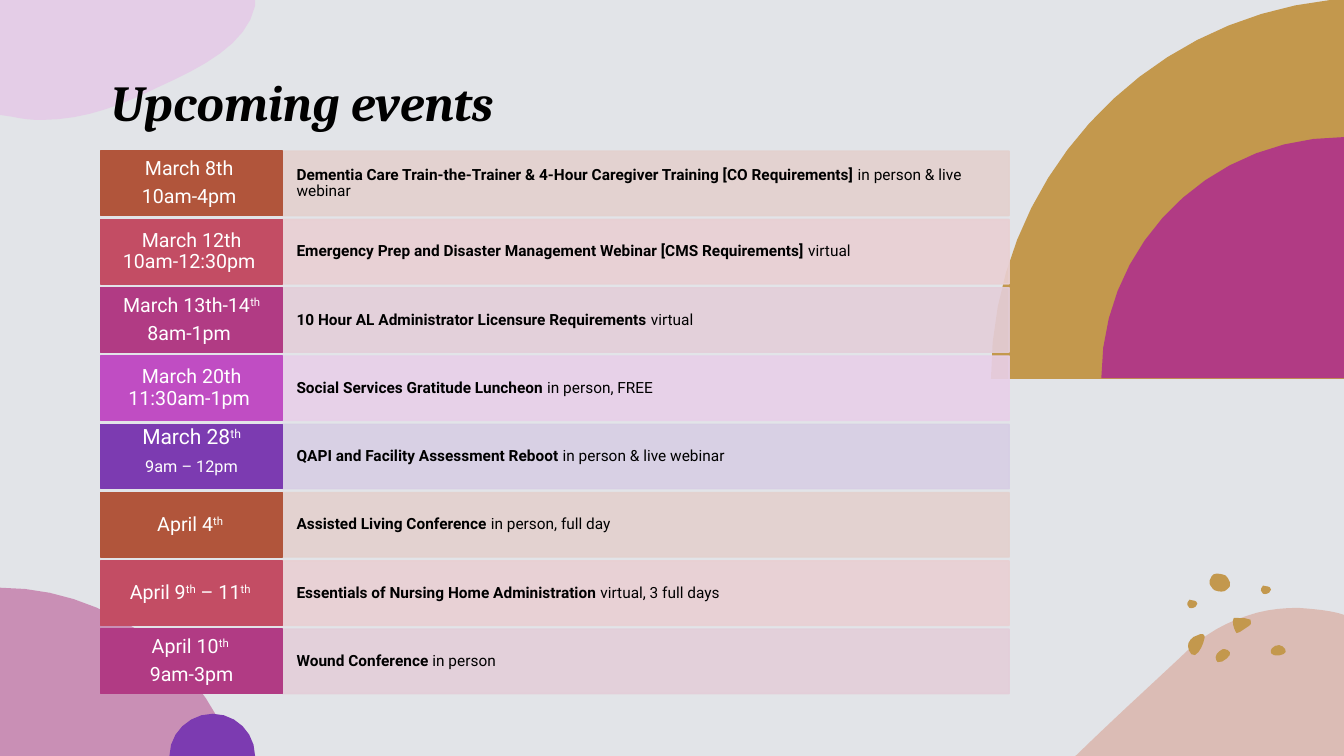
import math

import lxml.etree
import pptx
import pptx.dml.color
import pptx.enum.shapes
import pptx.enum.text
import pptx.oxml.ns
import pptx.util

Pt = pptx.util.Pt
PP_ALIGN = pptx.enum.text.PP_ALIGN
ANCHOR = pptx.enum.text.MSO_ANCHOR

COLORS = {
    "background": "E2E4E8", "black": "000000", "white": "FFFFFF",
    "gold": "C3984D", "peach": "D69684", "lilac": "E6B8E7",
    "rust": "B1553B", "rust_tint": "E4D1CE",
    "rose": "C34D64", "rose_tint": "E9D0D3",
    "magenta": "B13B84", "magenta_tint": "E4CED9",
    "orchid": "C04DC3", "orchid_tint": "E8D0E9",
    "purple": "7C3BB1", "purple_tint": "D7CEE4",
}

TITLE = "Upcoming events"

# Colour, date lines as (text, size) with superscripts between carets, event, format
EVENTS = [
    ("rust", [("March 8th ", 14), ("10am-4pm ", 14)],
     "Dementia Care Train-the-Trainer & 4-Hour Caregiver Training [CO Requirements] ",
     "in person & live webinar"),
    ("rose", [("March 12th 10am-12:30pm ", 14)],
     "Emergency Prep and Disaster Management Webinar [CMS Requirements] ", "virtual"),
    ("magenta", [("March 13th-14^th", 14), ("8am-1pm ", 14)],
     "10 Hour AL Administrator Licensure Requirements ", "virtual"),
    ("orchid", [("March 20th 11:30am-1pm ", 14)],
     "Social Services Gratitude Luncheon ", "in person, FREE"),
    ("purple", [("March 28^th", 15), ("^9am – 12pm", 20)],
     "QAPI and Facility Assessment Reboot ", "in person & live webinar"),
    ("rust", [("April 4^th ", 14)],
     "Assisted Living Conference ", "in person, full day"),
    ("rose", [("April 9^th^ – 11^th ", 14)],
     "Essentials of Nursing Home Administration ", "virtual, 3 full days"),
    ("magenta", [("April 10^th ", 14), ("9am-3pm", 14)],
     "Wound Conference", " in person"),
]

# Outlines in points: a start, then lines (x, y) and Bézier curves (two controls, end)
PEBBLE = [(900.7, 421.9), (900.7, 421.9, 900.7, 419, 902.2, 418.3), (905.8, 419),
          (906.5, 419, 907.9, 419.8, 907.9, 421.2), (906.5, 423.4), (905, 424.1),
          (904.3, 424.1, 902.9, 424.8, 902.2, 424.1)]
PEBBLE_SHIFT = (-52.6, 10.1)
HILL = [(927.4, 434.2), (936.7, 434.9, 946.1, 435.6, 955.4, 437.8), (960, 439.2),
        (960, 540), (768, 540), (769, 539.3), (793.4, 515.5, 818.6, 492.5, 841.7, 470.9),
        (857.5, 455, 872.6, 445.7, 890.6, 439.9), (902.9, 435.6, 915.1, 434.2, 927.4, 434.2)]
SPOTS = [
    [(873.4, 463.7), (874.8, 463.7, 875.5, 463.7, 877, 464.4),
     (878.4, 465.1, 879.1, 466.6, 878.4, 468), (877, 470.2, 872.6, 473.8, 869.8, 473),
     (869, 472.3, 868.3, 470.9, 868.3, 469.4), (868.3, 468, 869.8, 465.8, 871.2, 465.1)],
    [(857.5, 452.9), (859, 452.9, 860.4, 452.9, 860.4, 454.3), (860.4, 455.8),
     (859.7, 459.4, 858.2, 463, 856.1, 465.8), (854.6, 467.3, 852.5, 469.4, 851, 467.3),
     (848.9, 465.1, 848.2, 461.5, 848.9, 459.4), (849.6, 457.2, 851, 456.5, 852.5, 455)],
    [(913.7, 460.8), (915.1, 460.8, 917.3, 462.2, 918, 463.7),
     (918.7, 465.1, 918.7, 466.6, 916.6, 467.3), (914.4, 468.7, 908.6, 468.7, 907.9, 466.6),
     (907.2, 465.1, 907.9, 463.7, 908.6, 463), (910.1, 461.5, 911.5, 460.8, 913.7, 460.8)],
    [(864.7, 418.3), (864, 418.3, 863.3, 414, 865.4, 411.8),
     (866.9, 410.4, 866.9, 409.7, 869, 409.7), (871.2, 409.7, 874.1, 410.4, 875.5, 411.1),
     (877, 412.6, 879.8, 416.2, 878.4, 419), (876.2, 421.2, 875.5, 422.6, 872.6, 422.6),
     (870.5, 422.6, 866.9, 421.9, 866.2, 420.5)],
    [(884.2, 441.4), (888.5, 441.4, 896.4, 441.4, 893.5, 445.7), (892.1, 447.1),
     (885.6, 451.4), (883.4, 452.2), (882.7, 451.4),
     (881.3, 448.6, 880.6, 446.4, 880.6, 443.5), (881.3, 441.4)],
    PEBBLE,
    [tuple(v + PEBBLE_SHIFT[i % 2] for i, v in enumerate(seg)) for seg in PEBBLE],
]
CORNER = [(0, 0), (182.2, 0), (182.2, 4.3), (176.4, 31.7, 144, 48.2, 113.8, 61.9),
          (88.6, 74.2, 61.9, 85.7, 29.5, 85.7), (22.3, 85.7, 15.8, 85, 9.4, 83.5), (0, 82.1)]
ARCH = [(960, 0), (960, 270.7), (707.8, 270.7), (707.8, 130.3, 814.3, 14.4, 950.4, 0)]
INNER_ARCH = [(786.7, 270), (786.7, 175, 864, 97.9, 960, 97.9), (960, 270)]
MOUND = [(0, 419.8), (72.7, 419.8, 136.8, 465.1, 163.4, 529.2), (168, 540), (0, 540)]
DOME = [(151.9, 509.8), (168.5, 509.8, 182.2, 523.4, 182.2, 540), (121, 540),
        (121, 523.4, 135.4, 509.8, 151.9, 509.8)]

DECOR = [(HILL, "peach", 50), *[(spot, "gold", 100) for spot in SPOTS],
         (CORNER, "lilac", 50), (ARCH, "gold", 100), (INNER_ARCH, "magenta", 100),
         (MOUND, "magenta", 50), (DOME, "purple", 100)]

TITLE_BOX = (72, 31, 617.8, 63.3)
ROWS_TOP, ROW_PITCH, ROW_HEIGHT = 108, 48.77, 46.1
DATE_LEFT, DATE_WIDTH, EVENT_WIDTH = 72, 129.8, 519
SPACE_AFTER = 0.35


def rgb(name):
    return pptx.dml.color.RGBColor.from_string(COLORS[name])


def set_all(target, values):
    for name, value in values.items():
        setattr(target, name, value)


def paint(shape, color, opacity=100, outlined=False):
    shape.shadow.inherit = False
    shape.fill.solid()
    shape.fill.fore_color.rgb = rgb(color)
    if outlined:
        shape.line.color.rgb = rgb(color)
        shape.line.width = Pt(1)
    else:
        shape.line.fill.background()
    if opacity < 100:
        qn = pptx.oxml.ns.qn
        for clr in list(shape.element.spPr.iter(qn("a:srgbClr"))):
            lxml.etree.SubElement(clr, qn("a:alpha")).set("val", str(opacity * 1000))


def flatten(outline):
    """Turn lines and Bézier curves into points, with more steps on longer curves."""
    points = [outline[0]]
    for seg in outline[1:]:
        if len(seg) == 2:
            points.append(seg)
            continue
        ctrl = [points[-1], seg[0:2], seg[2:4], seg[4:6]]
        steps = math.ceil(math.sqrt(math.dist(ctrl[0], ctrl[3])) * 0.8)
        for step in range(1, steps + 1):
            t = step / steps
            weights = ((1 - t) ** 3, 3 * t * (1 - t) ** 2, 3 * t * t * (1 - t), t ** 3)
            points.append(tuple(sum(w * c[i] for w, c in zip(weights, ctrl)) for i in (0, 1)))
    return [(Pt(x), Pt(y)) for x, y in points]


def add_cell(s, left, top, width, color, opacity, margins):
    """Add one box of the schedule and return its text frame."""
    shape = s.shapes.add_shape(pptx.enum.shapes.MSO_SHAPE.RECTANGLE,
                               Pt(left), Pt(top), Pt(width), Pt(ROW_HEIGHT))
    paint(shape, color, opacity, outlined=True)
    x, y = map(Pt, margins)
    set_all(shape.text_frame, dict(word_wrap=True, vertical_anchor=ANCHOR.MIDDLE, margin_left=x,
                                   margin_right=x, margin_top=y, margin_bottom=y))
    return shape.text_frame


def add_run(p, text, size, color, bold=False, font="Roboto", italic=False):
    r = p.add_run()
    r.text = text
    set_all(r.font, dict(size=Pt(size), name=font, bold=bold, italic=italic))
    r.font.color.rgb = rgb(color)
    return r


def format_line(p, size, alignment):
    set_all(p, dict(alignment=alignment, line_spacing=0.9, space_after=Pt(size * SPACE_AFTER)))


def main():
    prs = pptx.Presentation()
    set_all(prs, dict(slide_width=Pt(960), slide_height=Pt(540)))
    s = prs.slides.add_slide(prs.slide_layouts[5])
    s.background.fill.solid()
    s.background.fill.fore_color.rgb = rgb("background")

    for outline, color, opacity in DECOR:
        points = flatten(outline)
        builder = s.shapes.build_freeform(*points[0])
        builder.add_line_segments(points[1:], close=True)
        paint(builder.convert_to_shape(), color, opacity)

    title = s.shapes.title
    set_all(title, dict(zip(("left", "top", "width", "height"), map(Pt, TITLE_BOX))))
    title.element.getparent().append(title.element)  # in front of the decoration
    tf = title.text_frame
    set_all(tf, dict(vertical_anchor=ANCHOR.BOTTOM, word_wrap=True, margin_top=0, margin_bottom=0,
                     auto_size=pptx.enum.text.MSO_AUTO_SIZE.NONE))
    p = tf.paragraphs[0]
    p.alignment = PP_ALIGN.LEFT
    add_run(p, TITLE, 36, "black", bold=True, font="Cambria", italic=True)

    for row, (color, dates, event, detail) in enumerate(EVENTS):
        top = ROWS_TOP + row * ROW_PITCH
        tf = add_cell(s, DATE_LEFT + DATE_WIDTH, top, EVENT_WIDTH, color + "_tint", 90, (10, 11.5))
        p = tf.paragraphs[0]
        format_line(p, 11, PP_ALIGN.LEFT)
        add_run(p, event, 11, "black", bold=True)
        add_run(p, detail, 11, "black")

        tf = add_cell(s, DATE_LEFT, top, DATE_WIDTH, color, 100, (7.2, 4.3))
        for i, (text, size) in enumerate(dates):
            p = tf.add_paragraph() if i else tf.paragraphs[0]
            format_line(p, size, PP_ALIGN.CENTER)
            for j, part in enumerate(text.split("^")):
                if part:
                    r = add_run(p, part, size, "white")
                    if j % 2:
                        r._r.get_or_add_rPr().set("baseline", "30000")

    prs.save("out.pptx")


if __name__ == "__main__":
    main()
